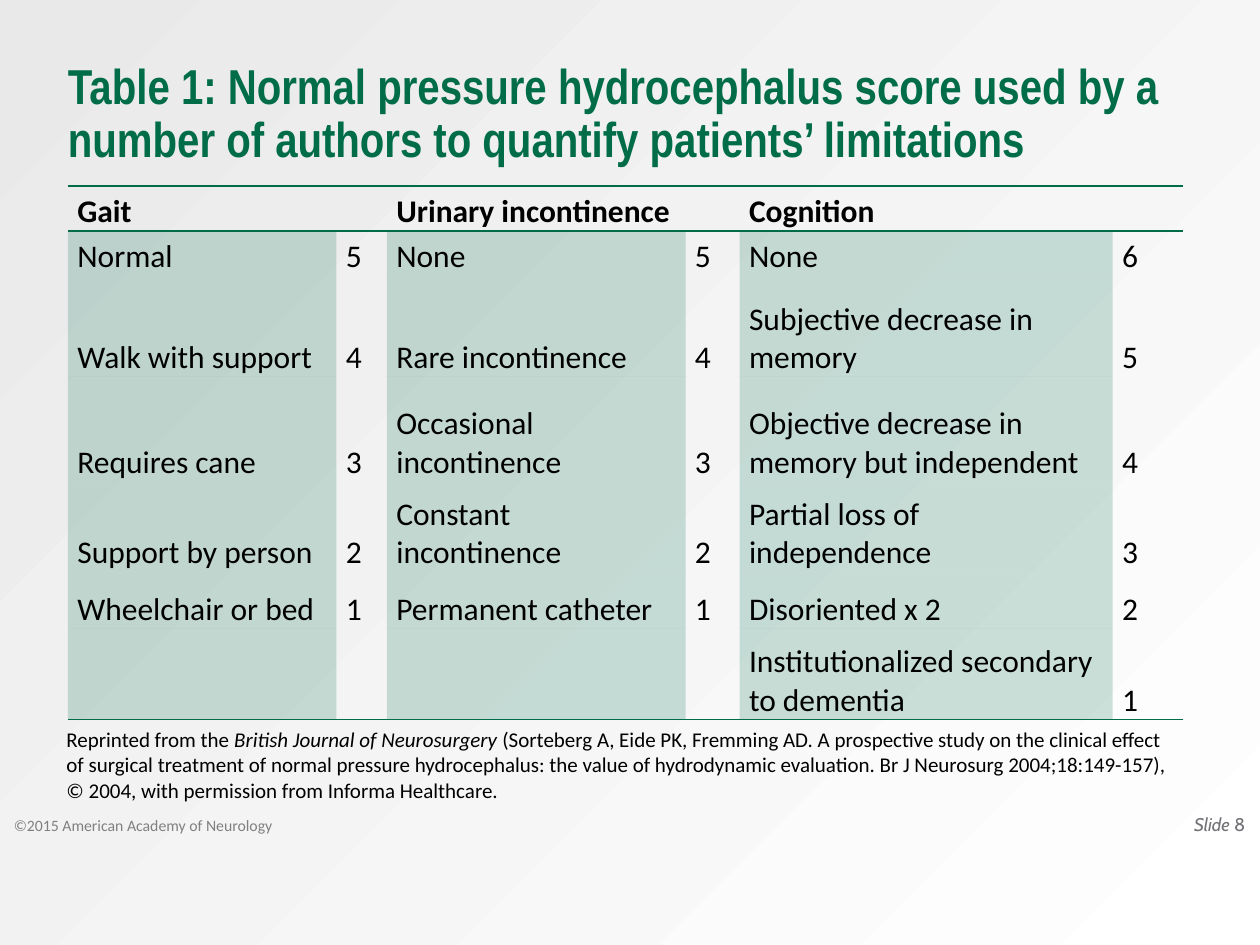
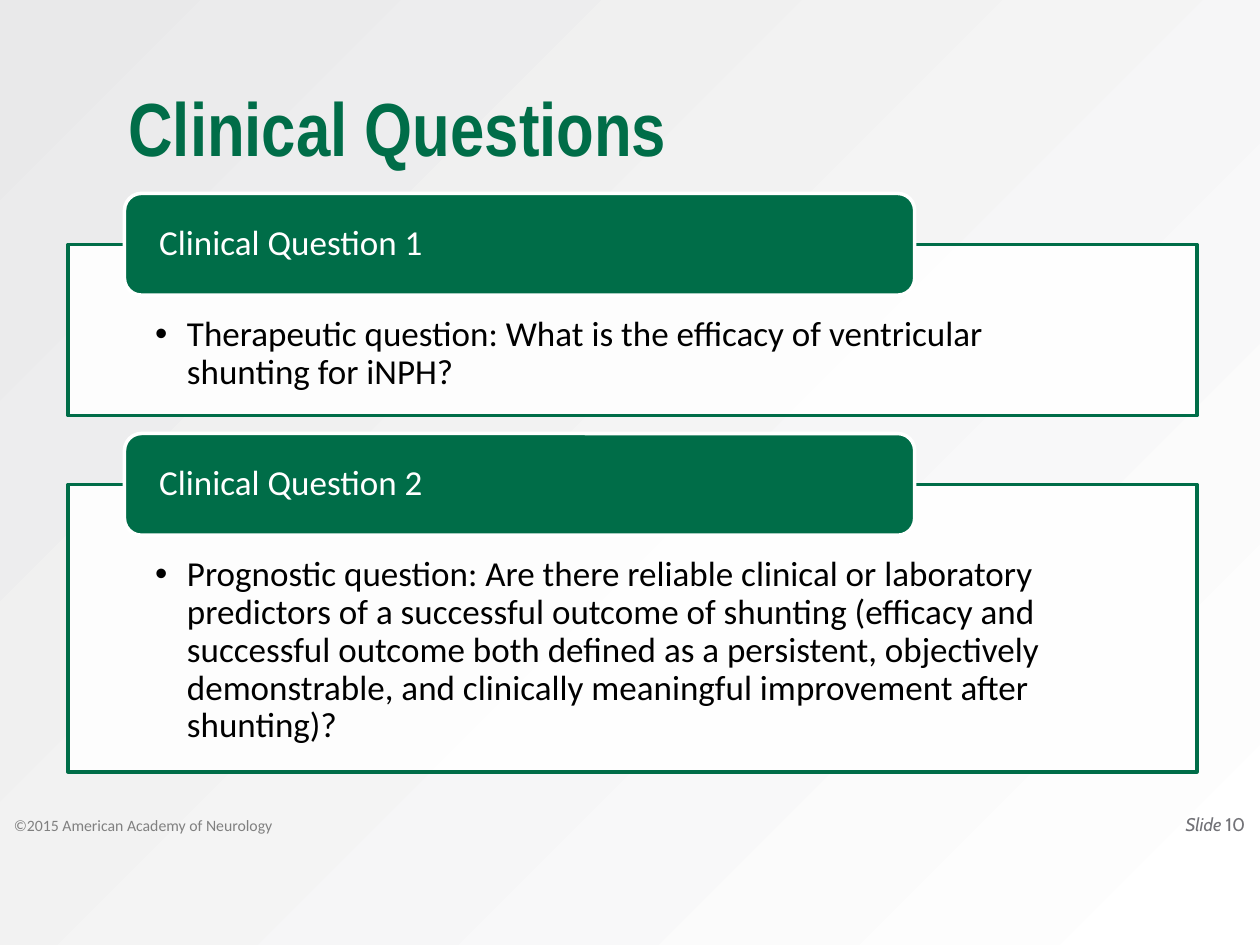
from lxml.etree import SubElement as Sub
from pptx import Presentation
from pptx.dml.color import RGBColor as Rgb
from pptx.enum.shapes import MSO_SHAPE as Kind
from pptx.enum.text import MSO_ANCHOR as Anchor, MSO_AUTO_SIZE as Auto, PP_ALIGN as Align
from pptx.oxml.ns import qn
from pptx.util import Cm, Pt

HUE = {"green": "006D48", "white": "FFFFFF", "mist": "E9E9EA",
       "black": "000000", "gray": "808080", "slate": "727277"}
HEAD, BODY, MARK = "Arial Narrow", "Calibri", "Cabin"
LEFT, WIDE = 1.37, 22.76

CREDIT = "©2015 American Academy of Neurology"
SCORES = {
    "title": "Table 1: Normal pressure hydrocephalus score used by a number of authors "
             "to quantify patients’ limitations",
    "number": "8",
    "box": (LEFT, 0.94, WIDE, 2.49),
    "size": 28,
}
GROUPS = ["Gait", "Urinary incontinence", "Cognition"]
ROWS = [
    ("Normal", "5", "None", "5", "None", "6"),
    ("Walk with support", "4", "Rare incontinence", "4", "Subjective decrease in memory", "5"),
    ("Requires cane", "3", "Occasional incontinence", "3",
     "Objective decrease in memory but independent", "4"),
    ("Support by person", "2", "Constant incontinence", "2", "Partial loss of independence", "3"),
    ("Wheelchair or bed", "1", "Permanent catheter", "1", "Disoriented x 2", "2"),
    ("", "", "", "", "Institutionalized secondary to dementia", "1"),
]
COLS = [5.41, 1.02, 6.02, 1.09, 7.52, 1.42]
HIGHS = [0.91, 0.91, 2.03, 2.11, 1.83, 1.14, 1.83]
NOTE = [
    ("Reprinted from the ", False),
    ("British Journal of Neurosurgery ", True),
    ("(Sorteberg A, Eide PK, Fremming AD. A prospective study on the clinical effect of "
     "surgical treatment of normal pressure hydrocephalus: the value of hydrodynamic "
     "evaluation. Br J Neurosurg 2004;18:149-157), © 2004, with permission from "
     "Informa Healthcare.", False),
]
ASKS = {
    "title": "Clinical Questions",
    "number": "10",
    "box": (2.59, 1.55, WIDE, 1.98),
    "size": 43,
}
PANELS = [
    ("Clinical Question 1", 3.45,
     "Therapeutic question: What is the efficacy of ventricular shunting for iNPH?"),
    ("Clinical Question 2", 5.79,
     "Prognostic question: Are there reliable clinical or laboratory predictors of a "
     "successful outcome of shunting (efficacy and successful outcome both defined as a "
     "persistent, objectively demonstrable, and clinically meaningful improvement after "
     "shunting)?"),
]


def rgb(name):
    return Rgb.from_string(HUE[name])


def cms(vals):
    return [Cm(v) for v in vals]


def style(para, size, hue, face=BODY, bold=False):
    for run in para.runs:
        font = run.font
        font.size, font.name, font.bold = Pt(size), face, bold
        font.color.rgb = rgb(hue)


def inset(item, left, top, right, low):
    item.margin_left, item.margin_top, item.margin_right, item.margin_bottom = cms(
        (left, top, right, low))


def mix(para, parts):
    for text, slant in parts:
        run = para.add_run()
        run.text = text
        run.font.italic = slant


def fade(fill, share):
    Sub(fill[0], qn("a:alpha"), val=str(share * 1000))


def label(slide, box):
    frame = slide.shapes.add_textbox(*cms(box)).text_frame
    frame.word_wrap = True
    return frame


def shade(master):
    fill = master.background.fill
    fill.gradient()
    for stop, hue in zip(fill.gradient_stops, ("white", "mist")):
        stop.color.rgb = rgb(hue)
    grad = next(master.element.iter(qn("a:gradFill")))
    grad.remove(grad.find(qn("a:lin")))
    ring = Sub(grad, qn("a:path"), path="circle")
    Sub(ring, qn("a:fillToRect"), l="100000", t="100000")


def start(deck, data):
    slide = deck.slides.add_slide(deck.slide_layouts[5])
    title = slide.shapes.title
    title.left, title.top, title.width, title.height = cms(data["box"])
    frame = title.text_frame
    frame.text = data["title"]
    frame.auto_size, frame.vertical_anchor = Auto.NONE, Anchor.BOTTOM
    inset(frame, 0, 0.05, 0, 0.05)
    para = frame.paragraphs[0]
    para.alignment, para.line_spacing = Align.LEFT, 0.9
    style(para, data["size"], "green", HEAD, True)

    frame = label(slide, (0.28, 16.31, 15.24, 0.56))
    frame.text = CREDIT
    frame.vertical_anchor = Anchor.BOTTOM
    inset(frame, 0, 0.05, 0, 0.05)
    style(frame.paragraphs[0], 9, "gray")

    frame = label(slide, (19.43, 16.31, 5.92, 0.6))
    frame.vertical_anchor = Anchor.MIDDLE
    inset(frame, 0.25, 0, 0.25, 0)
    para = frame.paragraphs[0]
    para.alignment = Align.RIGHT
    mix(para, [("Slide ", True), (data["number"], False)])
    style(para, 10.5, "slate", MARK)
    return slide


def rule(cell, sides):
    props = cell._tc.get_or_add_tcPr()
    for spot, side in enumerate(sides):
        line = Sub(props, qn("a:ln" + side), w=str(Pt(1)))
        Sub(Sub(line, qn("a:solidFill")), qn("a:srgbClr"), val=HUE["green"])
        props.insert(spot, line)


def scores(deck):
    slide = start(deck, SCORES)
    shape = slide.shapes.add_table(len(HIGHS), len(COLS),
                                   *cms((LEFT, 3.75, sum(COLS), sum(HIGHS))))
    grid = shape.table
    grid.first_row = grid.horz_banding = False
    key = next(shape.element.iter(qn("a:tableStyleId")))
    key.text = "{2D5ABB26-0587-4C30-8999-92F81FD0307C}"
    for col, wide in zip(grid.columns, COLS):
        col.width = Cm(wide)
    for row, high in zip(grid.rows, HIGHS):
        row.height = Cm(high)
    heads = [text for name in GROUPS for text in (name, "")]
    for r, texts in enumerate([heads] + ROWS):
        for c, text in enumerate(texts):
            cell = grid.cell(r, c)
            cell.text = text
            cell.vertical_anchor = Anchor.BOTTOM
            inset(cell, 0.19, 0, 0.18, 0)
            style(cell.text_frame.paragraphs[0], 18, "black", bold=r == 0)
            if r and c % 2 == 0:
                cell.fill.solid()
                cell.fill.fore_color.rgb = rgb("green")
                fade(cell._tc.tcPr.find(qn("a:solidFill")), 20)
            else:
                cell.fill.background()
            rule(cell, "TB" if r == 0 else "B" if r == len(ROWS) else "")
    for c in range(0, len(COLS), 2):
        grid.cell(0, c).merge(grid.cell(0, c + 1))

    frame = label(slide, (1.09, 14.52, WIDE, 1.78))
    inset(frame, 0.25, 0.13, 0.25, 0)
    para = frame.paragraphs[0]
    mix(para, NOTE)
    style(para, 12, "black")


def block(slide, kind, box, fill, line, text, hue):
    shape = slide.shapes.add_shape(kind, *cms(box))
    shape.shadow.inherit = False
    shape.fill.solid()
    shape.fill.fore_color.rgb = rgb(fill)
    shape.line.color.rgb = rgb(line)
    shape.line.width = Pt(2)
    frame = shape.text_frame
    frame.text = text
    frame.word_wrap = True
    para = frame.paragraphs[0]
    para.alignment, para.line_spacing = Align.LEFT, 0.9
    style(para, 20, hue)
    return shape


def asks(deck):
    slide = start(deck, ASKS)
    top, gap, rise = 4.93, 1.39, 1.03
    for name, high, text in PANELS:
        panel = block(slide, Kind.RECTANGLE, (LEFT, top, WIDE, high),
                      "white", "green", text, "black")
        fade(panel.element.spPr.find(qn("a:solidFill")), 90)
        frame = panel.text_frame
        frame.vertical_anchor = Anchor.TOP
        inset(frame, 1.76, 1.45, 1.78, 0.41)
        props = frame.paragraphs[0]._p.get_or_add_pPr()
        props.set("marL", str(Cm(0.64)))
        props.set("indent", str(-Cm(0.64)))
        Sub(props, qn("a:buFont"), typeface="Arial")
        Sub(props, qn("a:buChar"), char="•")
        tab = block(slide, Kind.ROUNDED_RECTANGLE, (2.51, top - rise, 15.93, 2.05),
                    "green", "white", name, "white")
        tab.text_frame.vertical_anchor = Anchor.MIDDLE
        inset(tab.text_frame, 0.6, 0, 0.6, 0)
        top += high + gap


def main():
    deck = Presentation()
    deck.slide_width, deck.slide_height = cms((25.4, 19.05))
    shade(deck.slide_master)
    scores(deck)
    asks(deck)
    deck.save("out.pptx")


if __name__ == "__main__":
    main()
